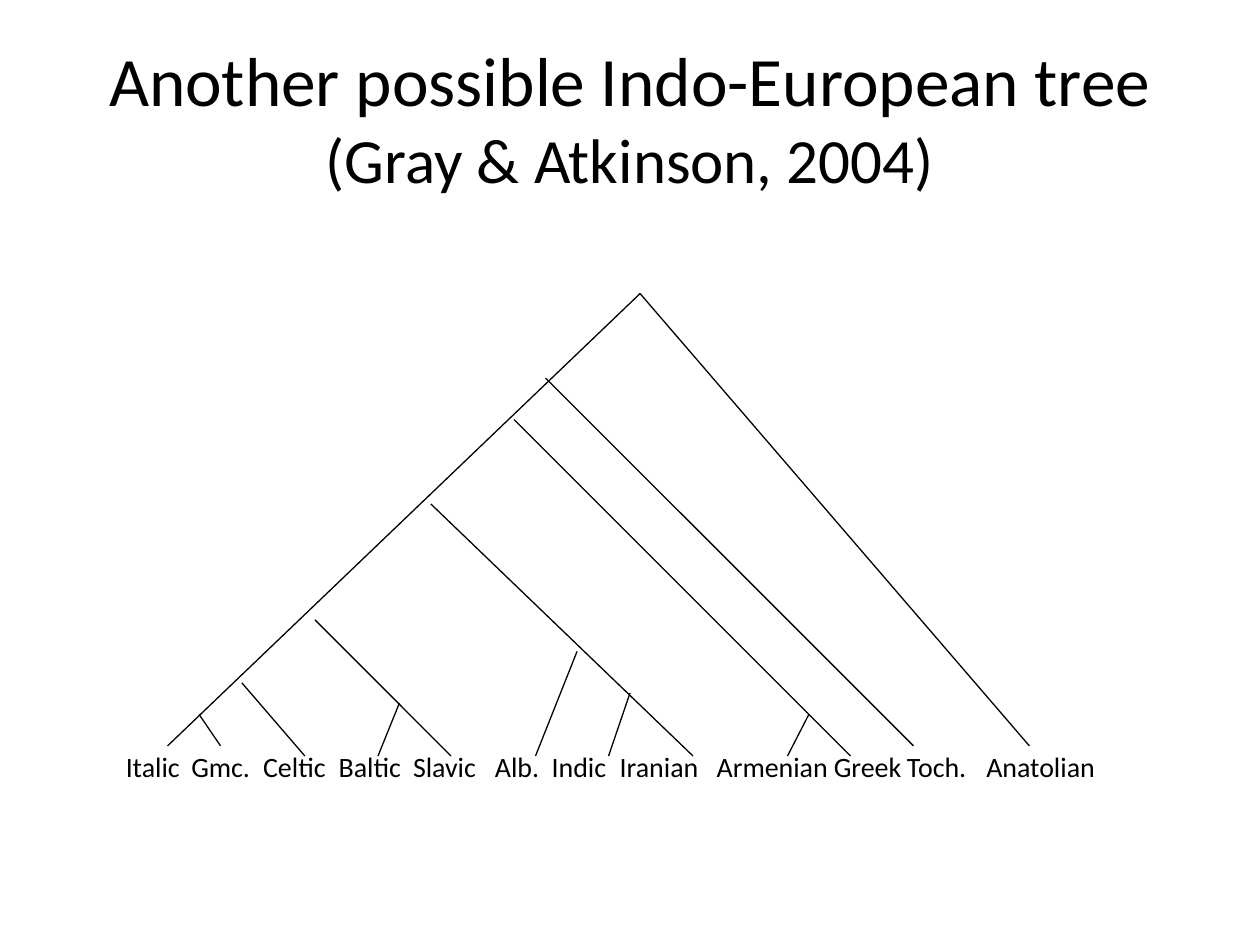
from dataclasses import dataclass

import pptx
import pptx.dml.color
import pptx.enum.shapes
import pptx.enum.text
import pptx.oxml
import pptx.oxml.ns
import pptx.util
from pptx.util import Inches


@dataclass(frozen=True)
class Theme:
    font: str = "Calibri"
    ink: pptx.dml.color.RGBColor = pptx.dml.color.RGBColor(0, 0, 0)
    paper: pptx.dml.color.RGBColor = pptx.dml.color.RGBColor(255, 255, 255)
    title_size: float = 39.6
    citation_size: float = 36
    language_size: float = 16
    branch_width: float = 0.75


THEME = Theme()

# Each language family with the left edge of its label, in inches
LANGUAGES = [
    ("Italic", 1.0), ("Gmc.", 1.52), ("Celtic", 2.09), ("Baltic", 2.69),
    ("Slavic", 3.28), ("Alb.", 3.93), ("Indic", 4.38), ("Iranian", 4.92),
    ("Armenian", 5.69), ("Greek", 6.62), ("Toch.", 7.2), ("Anatolian", 7.83),
]

# Branches of the tree: (fork, tip), in inches
ROOT = (5.08, 2.33)
BRANCHES = [
    (ROOT, (1.33, 5.92)),          # Italic
    ((1.58, 5.67), (1.75, 5.92)),  # Germanic
    ((1.92, 5.42), (2.42, 6)),     # Celtic
    ((3.17, 5.58), (3, 6)),        # Baltic
    ((2.5, 4.92), (3.58, 6)),      # Slavic
    ((4.58, 5.17), (4.25, 6)),     # Albanian
    ((5, 5.5), (4.83, 6)),         # Indic
    ((3.42, 4), (5.5, 6)),         # Iranian
    ((6.42, 5.67), (6.25, 6)),     # Armenian
    ((4.08, 3.33), (6.75, 6)),     # Greek
    ((4.33, 3), (7.25, 5.92)),     # Tocharian
    (ROOT, (8.17, 5.92)),          # Anatolian
]


def add_run(paragraph, text, size):
    run = paragraph.add_run()
    run.text = text
    run.font.name = THEME.font
    run.font.size = pptx.util.Pt(size)
    run.font.color.rgb = THEME.ink


def set_title(slide, heading, citation):
    title = slide.shapes.title
    title.left, title.top = Inches(0.5), Inches(0.3)
    title.width, title.height = Inches(9), Inches(1.25)
    frame = title.text_frame
    frame.auto_size = pptx.enum.text.MSO_AUTO_SIZE.NONE
    frame.vertical_anchor = pptx.enum.text.MSO_ANCHOR.MIDDLE
    paragraph = frame.paragraphs[0]
    paragraph.alignment = pptx.enum.text.PP_ALIGN.CENTER
    add_run(paragraph, heading, THEME.title_size)
    add_run(paragraph, citation, THEME.citation_size)


def add_branch(slide, fork, tip):
    branch = slide.shapes.add_connector(
        pptx.enum.shapes.MSO_CONNECTOR.STRAIGHT,
        *(Inches(value) for value in (*fork, *tip)))
    branch.line.color.rgb = THEME.ink
    branch.line.width = pptx.util.Pt(THEME.branch_width)
    properties = branch._element.spPr
    properties.append(pptx.oxml.parse_xml(
        f'<a:effectLst {pptx.oxml.ns.nsdecls("a")}/>'))


def add_language_row(slide, languages):
    names, edges = zip(*languages)
    row = slide.shapes.add_textbox(
        Inches(0.9), Inches(5.9), Inches(8.04), Inches(0.4))
    row.text_frame.word_wrap = True
    paragraph = row.text_frame.paragraphs[0]
    add_run(paragraph, "\t".join(names), THEME.language_size)
    # Tab stops are measured from the first label
    stops = "".join(
        f'<a:tab pos="{Inches(edge - edges[0])}" algn="l"/>'
        for edge in edges[1:])
    paragraph._p.get_or_add_pPr().append(pptx.oxml.parse_xml(
        f'<a:tabLst {pptx.oxml.ns.nsdecls("a")}>{stops}</a:tabLst>'))


def main():
    presentation = pptx.Presentation()
    presentation.slide_width = Inches(10)
    presentation.slide_height = Inches(7.5)
    title_only = presentation.slide_layouts[5]
    slide = presentation.slides.add_slide(title_only)
    slide.background.fill.solid()
    slide.background.fill.fore_color.rgb = THEME.paper

    # Title
    set_title(slide, "Another possible Indo-European tree ",
              "(Gray & Atkinson, 2004)")

    # Family tree
    for fork, tip in BRANCHES:
        add_branch(slide, fork, tip)
    add_language_row(slide, LANGUAGES)

    presentation.save("out.pptx")


if __name__ == "__main__":
    main()
